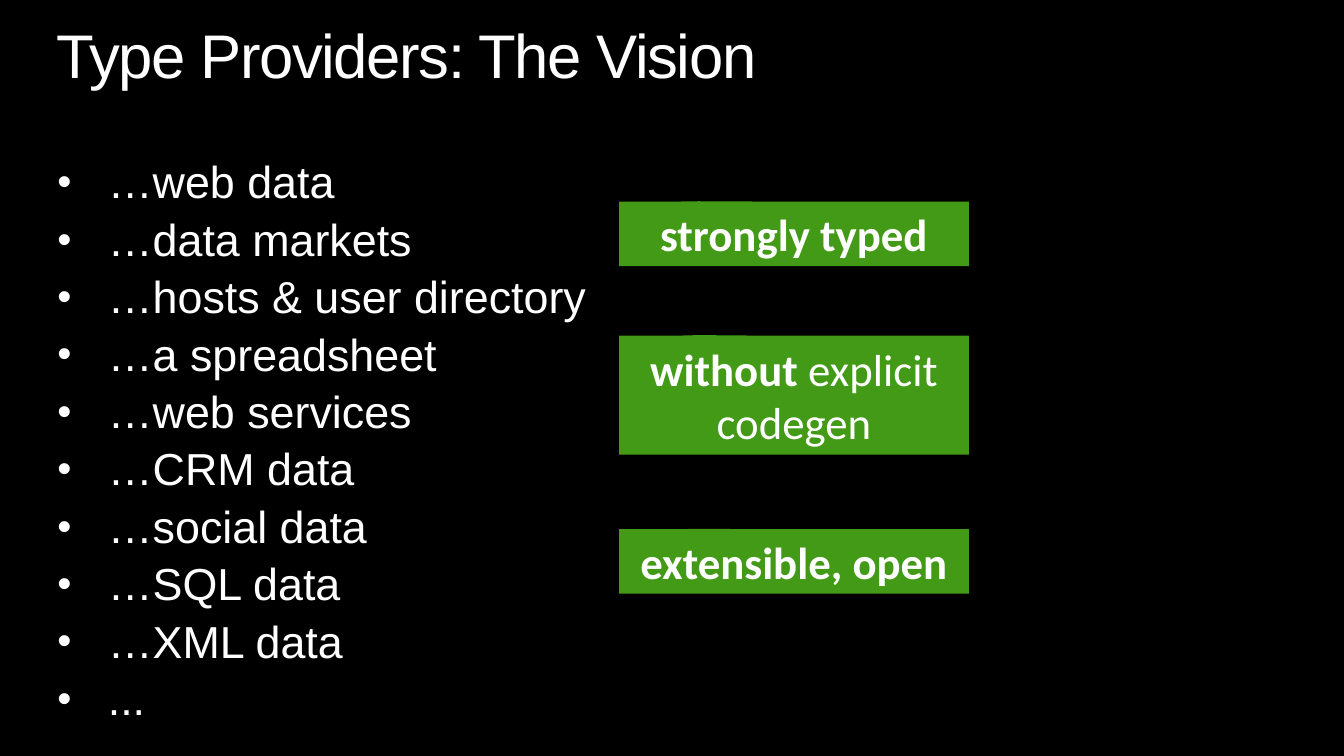
import pptx
import pptx.dml.color
import pptx.enum.shapes
import pptx.enum.text
import pptx.oxml
import pptx.oxml.ns
import pptx.util
from pptx.util import Inches

BLACK = pptx.dml.color.RGBColor(0x00, 0x00, 0x00)
WHITE = pptx.dml.color.RGBColor(0xFF, 0xFF, 0xFF)
GREEN = pptx.dml.color.RGBColor(0x42, 0x9A, 0x16)

DATA_SOURCES = [
    "…web data", "…data markets", "…hosts & user directory", "…a spreadsheet",
    "…web services", "…CRM data", "…social data", "…SQL data", "…XML data", "...",
]
CALLOUTS = [
    (2, 0.64, [("strongly typed", True)]),
    (3.33, 1.18, [("without ", True), ("explicit codegen", False)]),
    (5.25, 0.64, [("extensible, open", True)]),
]
NAMESPACE = pptx.oxml.ns.nsdecls("a")
SHADOW = (
    f'<a:effectLst {NAMESPACE}>'
    '<a:outerShdw blurRad="39370" dist="22860" dir="5400000" rotWithShape="0">'
    '<a:srgbClr val="000000"><a:alpha val="35000"/></a:srgbClr>'
    '</a:outerShdw></a:effectLst>'
)


def add_run(paragraph, text, size, font_name, bold=False):
    run = paragraph.add_run()
    run.text = text
    run.font.size = pptx.util.Pt(size)
    run.font.name = font_name
    run.font.bold = bold
    run.font.color.rgb = WHITE
    return run


def prepare_frame(shape, horizontal, vertical, anchor):
    frame = shape.text_frame
    frame.word_wrap = True
    frame.auto_size = pptx.enum.text.MSO_AUTO_SIZE.NONE
    frame.margin_left = frame.margin_right = Inches(horizontal)
    frame.margin_top = frame.margin_bottom = Inches(vertical)
    frame.vertical_anchor = anchor
    return frame


def place_title(slide, left, top, width, height):
    title = slide.shapes.title
    title.left, title.top, title.width, title.height = left, top, width, height
    frame = prepare_frame(title, 0, 0, pptx.enum.text.MSO_ANCHOR.TOP)
    paragraph = frame.paragraphs[0]
    paragraph.alignment = pptx.enum.text.PP_ALIGN.LEFT
    paragraph.line_spacing = 0.9
    run = add_run(paragraph, "Type Providers: The Vision", 44, "Arial")
    run.font._element.set("spc", "-100")


def add_source_list(slide, left, top, width, height):
    box = slide.shapes.add_textbox(left, top, width, height)
    frame = prepare_frame(box, 0, 0, pptx.enum.text.MSO_ANCHOR.TOP)
    for index, source in enumerate(DATA_SOURCES):
        paragraph = frame.add_paragraph() if index else frame.paragraphs[0]
        paragraph.line_spacing = 0.9
        paragraph.space_before = pptx.util.Pt(6.4 if index else 0)
        properties = paragraph._p.get_or_add_pPr()
        properties.set("marL", str(Inches(0.5)))
        properties.set("indent", str(-Inches(0.5)))
        for bullet in ('<a:buSzPct {} val="90000"/>', '<a:buFont {} typeface="Arial"/>',
                       '<a:buChar {} char="•"/>'):
            properties.append(pptx.oxml.parse_xml(bullet.format(NAMESPACE)))
        add_run(paragraph, source, 32, "Arial")


def add_callout(slide, left, top, width, height, phrases):
    callout = slide.shapes.add_shape(
        pptx.enum.shapes.MSO_SHAPE.RECTANGULAR_CALLOUT, left, top, width, height)
    callout.adjustments[0] = -0.273
    callout.adjustments[1] = -0.505
    callout.fill.solid()
    callout.fill.fore_color.rgb = GREEN
    callout.line.fill.background()
    callout._element.spPr.append(pptx.oxml.parse_xml(SHADOW))
    frame = prepare_frame(callout, 0.1, 0.05, pptx.enum.text.MSO_ANCHOR.MIDDLE)
    paragraph = frame.paragraphs[0]
    paragraph.alignment = pptx.enum.text.PP_ALIGN.CENTER
    for text, bold in phrases:
        add_run(paragraph, text, 32, "Calibri", bold)


def build_vision_slide(presentation):
    slide = presentation.slides.add_slide(presentation.slide_layouts[5])
    slide.background.fill.solid()
    slide.background.fill.fore_color.rgb = BLACK
    place_title(slide, Inches(0.56), Inches(0.25), Inches(12.22), Inches(0.67))
    add_source_list(slide, Inches(0.57), Inches(1.59), Inches(12.19), Inches(5.8))
    for top, height, phrases in CALLOUTS:
        add_callout(slide, Inches(6.14), Inches(top), Inches(3.47), Inches(height), phrases)


def main():
    presentation = pptx.Presentation()
    presentation.slide_width = Inches(13.33)
    presentation.slide_height = Inches(7.5)
    build_vision_slide(presentation)
    presentation.save("out.pptx")


if __name__ == "__main__":
    main()
